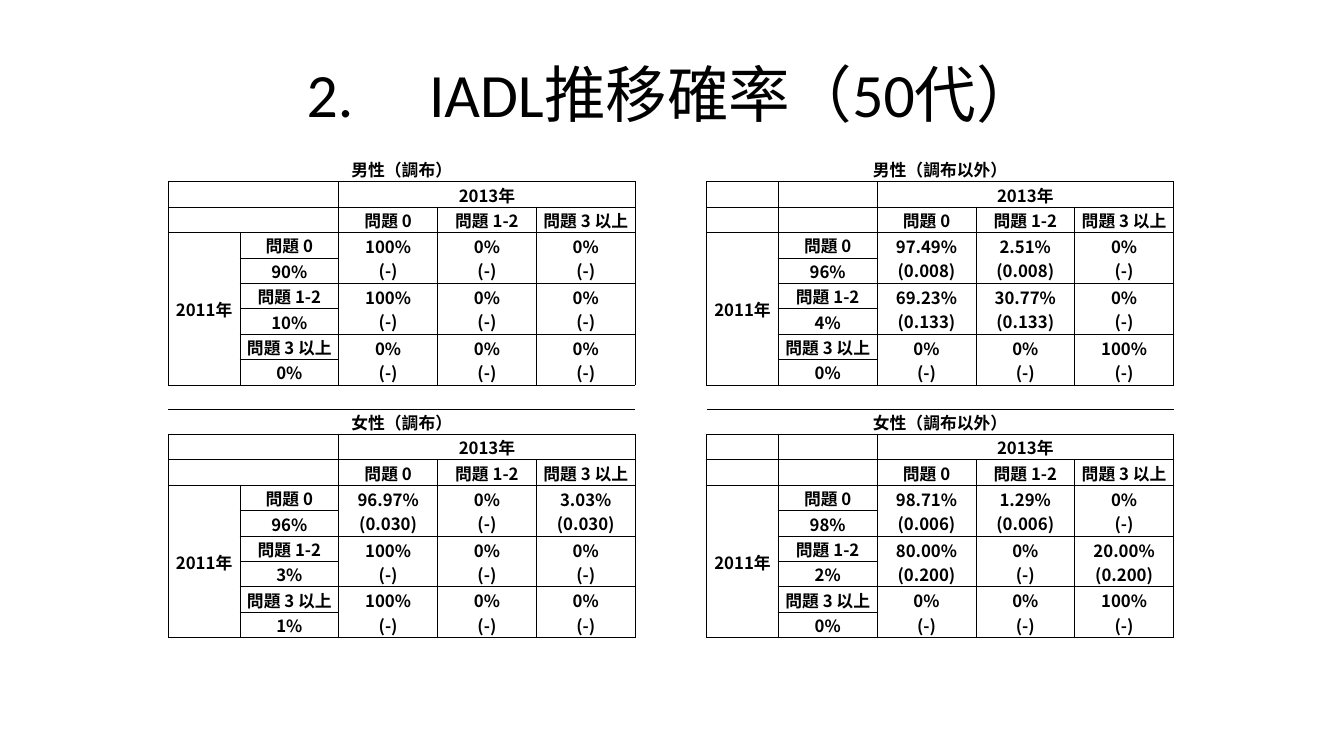
from dataclasses import dataclass
from typing import Any

from lxml import etree
from pptx import Presentation
from pptx import util as u
from pptx.dml import color
from pptx.enum import text
from pptx.oxml import ns

INK = "000000"
NO_GRID = "{2D5ABB26-0587-4C30-8999-92F81FD0307C}"
LEVELS = ("問題 0", "問題 1-2", "問題 3 以上")
ROWS, COLS = 19, 11
PANEL_ROWS, PANEL_COLS = 10, 6
NARROW, WIDE, ROW_HEIGHT = 0.71, 0.98, 0.24
NONE, ALL = ("0%", "(-)"), ("100%", "(-)")


@dataclass(frozen=True)
class Panel:
    row: int
    col: int
    caption: str
    shares: tuple[str, str, str]
    transitions: tuple[tuple[tuple[str, str], ...], ...]


PANELS = (
    Panel(0, 0, "男性（調布）", ("90%", "10%", "0%"), (
        (ALL, NONE, NONE),
        (ALL, NONE, NONE),
        (NONE, NONE, NONE))),
    Panel(0, 1, "男性（調布以外）", ("96%", "4%", "0%"), (
        (("97.49%", "(0.008)"), ("2.51%", "(0.008)"), NONE),
        (("69.23%", "(0.133)"), ("30.77%", "(0.133)"), NONE),
        (NONE, NONE, ALL))),
    Panel(1, 0, "女性（調布）", ("96%", "3%", "1%"), (
        (("96.97%", "(0.030)"), NONE, ("3.03%", "(0.030)")),
        (ALL, NONE, NONE),
        (ALL, NONE, NONE))),
    Panel(1, 1, "女性（調布以外）", ("98%", "2%", "0%"), (
        (("98.71%", "(0.006)"), ("1.29%", "(0.006)"), NONE),
        (("80.00%", "(0.200)"), NONE, ("20.00%", "(0.200)")),
        (NONE, NONE, ALL))),
)


def rgb(code: str) -> color.RGBColor:
    return color.RGBColor.from_string(code)


def apply(target: Any, values: dict[str, Any]) -> None:
    for name, value in values.items():
        setattr(target, name, value)


def region(row: int, col: int) -> tuple:
    if not (0 <= row < ROWS and 0 <= col < COLS):
        return ()
    inner_row, inner_col = row % PANEL_ROWS, col % PANEL_COLS
    if inner_row in (0, PANEL_ROWS - 1) or inner_col == PANEL_COLS - 1:
        return ()
    if inner_row < 3 and inner_col < 2:
        return ("corner",)
    return row, col


def add_borders(cell: Any, row: int, col: int) -> None:
    neighbours = {"lnL": (row, col - 1), "lnR": (row, col + 1),
                  "lnT": (row - 1, col), "lnB": (row + 1, col)}
    properties = cell._tc.get_or_add_tcPr()
    edges = [side for side, place in neighbours.items()
             if region(row, col) != region(*place)]
    for position, side in enumerate(edges):
        line = etree.Element(ns.qn(f"a:{side}"), w=str(u.Pt(0.5)))
        fill = etree.SubElement(line, ns.qn("a:solidFill"))
        etree.SubElement(fill, ns.qn("a:srgbClr"), val=INK)
        properties.insert(position, line)


def format_cell(cell: Any, anchor: Any) -> None:
    inset = u.Inches(0.01)
    apply(cell, {"margin_left": inset, "margin_right": inset, "margin_top": inset,
                 "margin_bottom": 0, "vertical_anchor": anchor})
    cell.fill.background()
    paragraph = cell.text_frame.paragraphs[0]
    paragraph.alignment = text.PP_ALIGN.CENTER
    for run in paragraph.runs:
        apply(run.font, {"name": "Noto Sans CJK JP", "size": u.Pt(12), "bold": True})
        run.font.color.rgb = rgb(INK)
        etree.SubElement(run._r.get_or_add_rPr(), ns.qn("a:ea"), typeface="Noto Sans CJK JP")
    for line_break in paragraph._p.findall(ns.qn("a:br")):
        etree.SubElement(line_break, ns.qn("a:rPr"), sz="1200")
    if not paragraph.runs:
        paragraph._p.get_or_add_endParaRPr().set("sz", "1200")


def write(grid: Any, row: int, col: int, words: str, height: int = 1, width: int = 1) -> None:
    cell = grid.cell(row, col)
    if height * width > 1:
        cell.merge(grid.cell(row + height - 1, col + width - 1))
    cell.text_frame.paragraphs[0].text = words


def write_panel(grid: Any, panel: Panel) -> None:
    top, left = panel.row * PANEL_ROWS, panel.col * PANEL_COLS
    write(grid, top, left, panel.caption, width=5)
    write(grid, top + 1, left + 2, "2013年", width=3)
    write(grid, top + 3, left, "2011年", height=6)
    for index, level in enumerate(LEVELS):
        row = top + 3 + 2 * index
        write(grid, top + 2, left + 2 + index, level)
        write(grid, row, left + 1, level)
        write(grid, row + 1, left + 1, panel.shares[index])
        for target, estimate in enumerate(panel.transitions[index]):
            write(grid, row, left + 2 + target, "\n".join(estimate), height=2)


def add_transitions(slide: Any) -> None:
    widths = [NARROW if col % PANEL_COLS in (0, PANEL_COLS - 1) else WIDE for col in range(COLS)]
    grid = slide.shapes.add_table(ROWS, COLS, u.Inches(1.67), u.Inches(1.55),
                                  u.Inches(sum(widths)), u.Inches(ROWS * ROW_HEIGHT)).table
    apply(grid, {"first_row": False, "horz_banding": False})
    grid._tbl.tblPr.find(ns.qn("a:tableStyleId")).text = NO_GRID
    for column, width in zip(grid.columns, widths):
        column.width = u.Inches(width)
    for line in grid.rows:
        line.height = u.Inches(ROW_HEIGHT)
    for panel in PANELS:
        write_panel(grid, panel)
    for row in range(ROWS):
        for col in range(COLS):
            is_level = row % PANEL_ROWS >= 3 and col % PANEL_COLS == 1
            cell = grid.cell(row, col)
            format_cell(cell, text.MSO_ANCHOR.BOTTOM if is_level else text.MSO_ANCHOR.MIDDLE)
            add_borders(cell, row, col)


def add_title(slide: Any) -> None:
    title = slide.shapes.title
    apply(title, {"left": u.Inches(0.67), "top": u.Inches(0.3),
                  "width": u.Inches(12), "height": u.Inches(1.25)})
    title.text_frame.vertical_anchor = text.MSO_ANCHOR.MIDDLE
    heading = title.text_frame.paragraphs[0]
    heading.text = "2.　 IADL推移確率（50代）"
    heading.alignment = text.PP_ALIGN.CENTER
    font = heading.runs[0].font
    apply(font, {"name": "Calibri", "size": u.Pt(44)})
    font.color.rgb = rgb(INK)


def main() -> None:
    deck = Presentation()
    apply(deck, {"slide_width": u.Inches(13.33), "slide_height": u.Inches(7.5)})
    slide = deck.slides.add_slide(deck.slide_layouts[5])
    add_title(slide)
    add_transitions(slide)
    deck.save("out.pptx")


if __name__ == "__main__":
    main()
